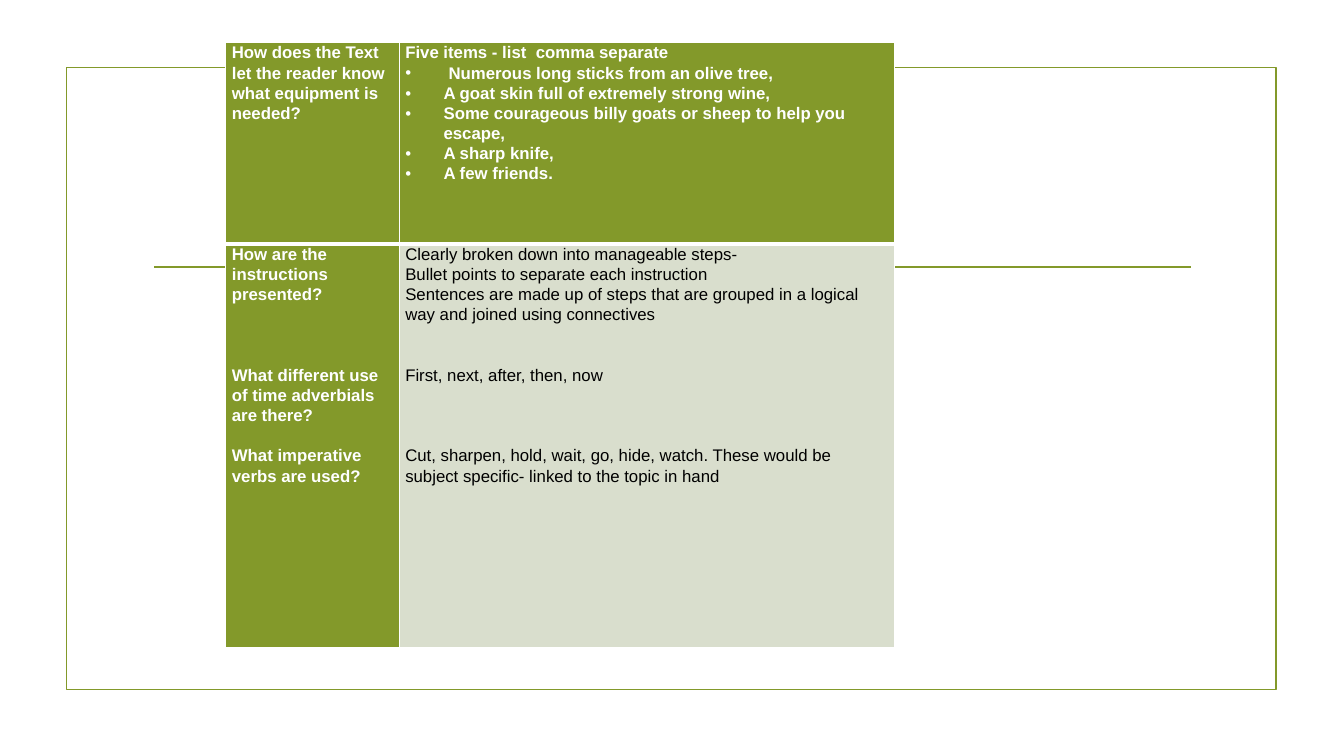
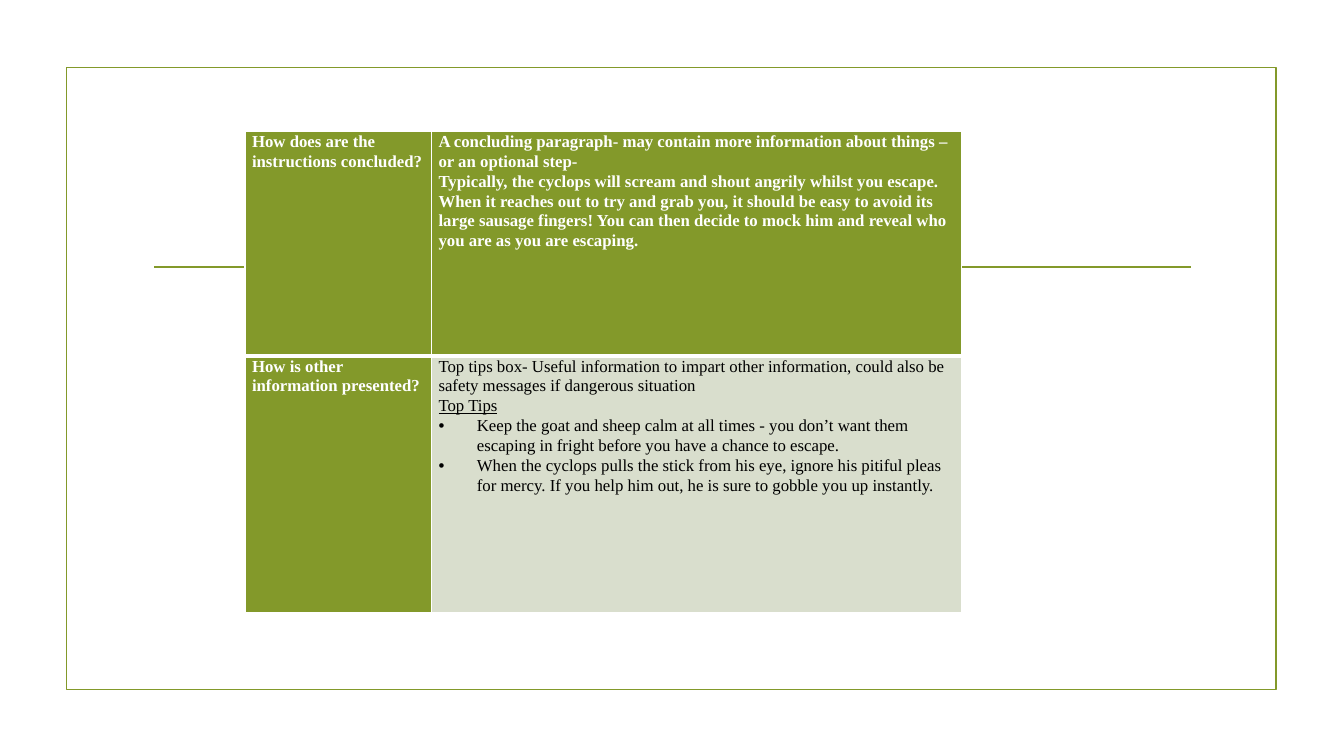
from dataclasses import dataclass

from lxml.etree import SubElement
from pptx import Presentation
from pptx.dml.color import RGBColor
from pptx.enum.shapes import MSO_CONNECTOR, MSO_SHAPE
from pptx.oxml.ns import qn
from pptx.util import Inches, Pt

COLOURS = {"olive": "83992A", "pale": "D9DECD", "white": "FFFFFF", "black": "000000"}
RGB = {name: RGBColor.from_string(value) for name, value in COLOURS.items()}
TEXT_SIZE = Pt(12)
LINE_SPACING = 1.07
LINE_PITCH = 14.4  # points from one line of text to the next
BULLET_HANG = 0.38


@dataclass
class Para:
    text: str
    lines_before: int = 0
    bullet: bool = False
    indent: float = BULLET_HANG
    underline: bool = False


def add_bullet(para, indent):
    props = para._p.get_or_add_pPr()
    props.set("marL", str(Inches(indent)))
    props.set("indent", str(-Inches(indent)))
    SubElement(props, qn("a:buFont"), typeface="Arial")
    SubElement(props, qn("a:buChar"), char="•")
    tabs = SubElement(props, qn("a:tabLst"))
    SubElement(tabs, qn("a:tab"), pos=str(Inches(0.5)), algn="l")


def add_borders(cell, row_number):
    """Draw white cell edges, with a heavy one under the first row."""
    props = cell._tc.get_or_add_tcPr()
    top, bottom = (1, 3) if row_number == 0 else (3, 1)
    for side, width in {"L": 1, "R": 1, "T": top, "B": bottom}.items():
        edge = SubElement(props, qn(f"a:ln{side}"), w=str(Pt(width)))
        fill = SubElement(edge, qn("a:solidFill"))
        SubElement(fill, qn("a:srgbClr"), val=COLOURS["white"])


PAGES = [
    {
        "font": "Arial", "place": (2.24, 0.42), "margin": 0.06,
        "columns": (1.72, 4.91), "rows": (2, 4),
        "cells": [
            [
                [Para("How does the Text let the reader know what equipment is needed?")],
                [
                    Para("Five items - list  comma separate"),
                    Para("Numerous long sticks from an olive tree,", bullet=True, indent=0.43),
                    Para("A goat skin full of extremely strong wine,", bullet=True),
                    Para("Some courageous billy goats or sheep to help you escape,", bullet=True),
                    Para("A sharp knife,", bullet=True),
                    Para("A few friends.", bullet=True),
                ],
            ],
            [
                [
                    Para("How are the instructions presented?"),
                    Para("What different use of time adverbials are there?", lines_before=3),
                    Para("What imperative verbs are used?", lines_before=1),
                ],
                [
                    Para("Clearly broken down into manageable steps-"),
                    Para("Bullet points to separate each instruction"),
                    Para("Sentences are made up of steps that are grouped in a logical way "
                         "and joined using connectives"),
                    Para("First, next, after, then, now", lines_before=2),
                    Para("Cut, sharpen, hold, wait, go, hide, watch. These would be subject "
                         "specific- linked to the topic in hand", lines_before=3),
                ],
            ],
        ],
    },
    {
        "font": "Times New Roman", "place": (2.43, 1.3), "margin": 0.07,
        "columns": (1.85, 5.26), "rows": (2.23, 2.55),
        "cells": [
            [
                [Para("How does are the instructions concluded?")],
                [
                    Para("A concluding paragraph- may contain more information about things "
                         "– or an optional step-"),
                    Para("Typically, the cyclops will scream and shout angrily whilst you "
                         "escape. When it reaches out to try and grab you, it should be easy "
                         "to avoid its large sausage fingers! You can then decide to mock him "
                         "and reveal who you are as you are escaping."),
                ],
            ],
            [
                [Para("How is other information presented?")],
                [
                    Para("Top tips box- Useful information to impart other information, could "
                         "also be safety messages if dangerous situation"),
                    Para("Top Tips", underline=True),
                    Para("Keep the goat and sheep calm at all times - you don’t want them "
                         "escaping in fright before you have a chance to escape.", bullet=True),
                    Para("When the cyclops pulls the stick from his eye, ignore his pitiful "
                         "pleas for mercy. If you help him out, he is sure to gobble you up "
                         "instantly.", bullet=True),
                ],
            ],
        ],
    },
]

deck = Presentation()
deck.slide_width, deck.slide_height = Inches(13.33), Inches(7.5)

for page in PAGES:
    slide = deck.slides.add_slide(deck.slide_layouts[6])

    frame = slide.shapes.add_shape(
        MSO_SHAPE.RECTANGLE, Inches(0.66), Inches(0.67), Inches(12), Inches(6.17))
    frame.shadow.inherit = False
    frame.fill.background()
    rule = slide.shapes.add_connector(
        MSO_CONNECTOR.STRAIGHT, Inches(1.53), Inches(2.65), Inches(11.81), Inches(2.65))
    SubElement(rule._element.spPr, qn("a:effectLst"))
    for outlined in (frame, rule):
        outlined.line.color.rgb = RGB["olive"]
        outlined.line.width = Pt(1.25)

    left, top = page["place"]
    table = slide.shapes.add_table(
        len(page["rows"]), len(page["columns"]), Inches(left), Inches(top),
        Inches(sum(page["columns"])), Inches(sum(page["rows"]))).table
    for column, width in zip(table.columns, page["columns"]):
        column.width = Inches(width)
    for row, height in zip(table.rows, page["rows"]):
        row.height = Inches(height)

    for row_number, row_cells in enumerate(page["cells"]):
        for column_number, content in enumerate(row_cells):
            is_heading = row_number == 0 or column_number == 0
            cell = table.cell(row_number, column_number)
            cell.margin_left = cell.margin_right = Inches(page["margin"])
            cell.margin_top = cell.margin_bottom = 0
            add_borders(cell, row_number)
            cell.fill.solid()
            cell.fill.fore_color.rgb = RGB["olive" if is_heading else "pale"]

            for number, item in enumerate(content):
                text_frame = cell.text_frame
                para = text_frame.add_paragraph() if number else text_frame.paragraphs[0]
                para.line_spacing = LINE_SPACING
                if item.lines_before:
                    para.space_before = Pt(item.lines_before * LINE_PITCH)
                if item.bullet:
                    add_bullet(para, item.indent)
                span = para.add_run()
                span.text = item.text
                span.font.name = page["font"]
                span.font.size = TEXT_SIZE
                span.font.bold = is_heading
                span.font.underline = item.underline
                span.font.color.rgb = RGB["white" if is_heading else "black"]

deck.save("out.pptx")
